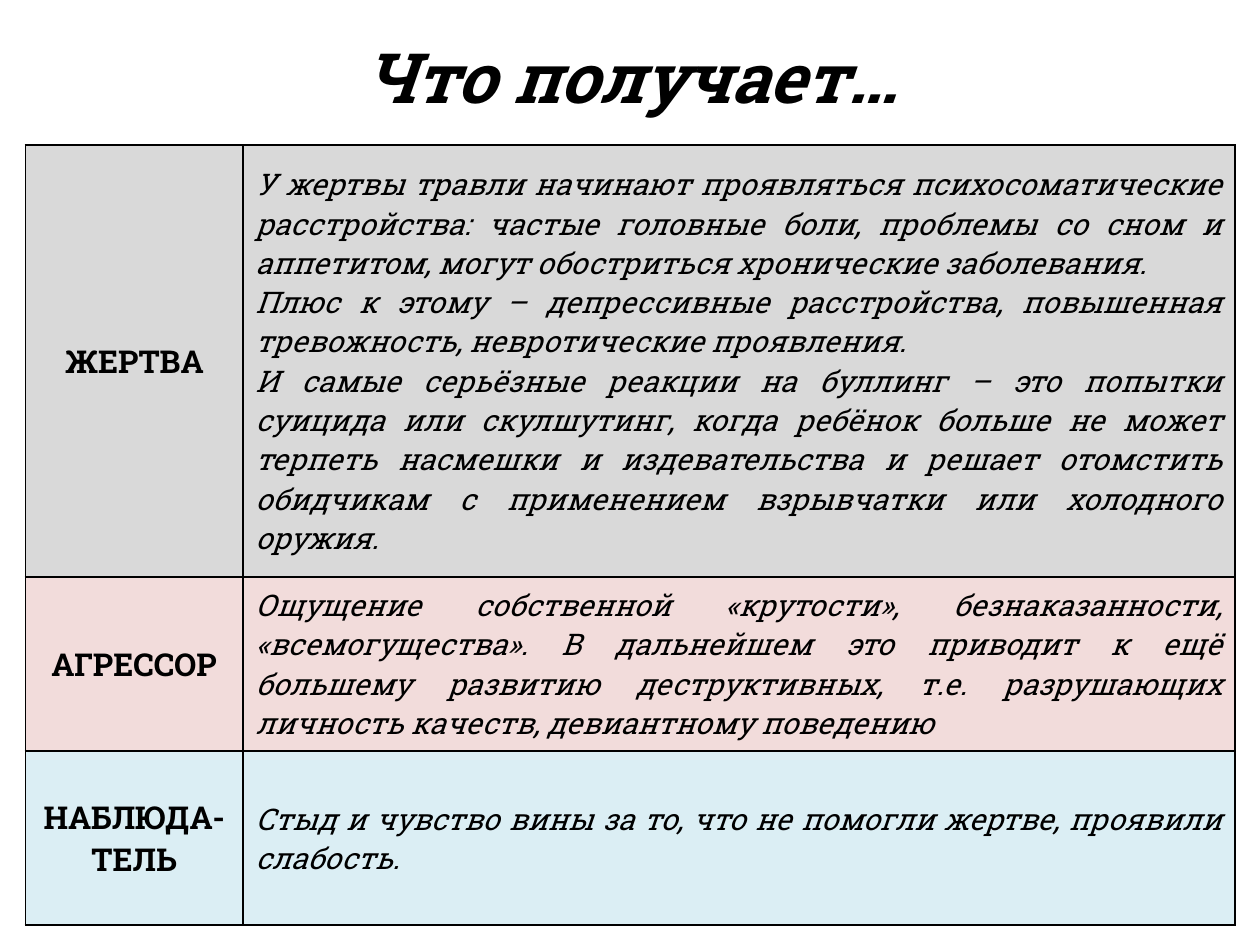
from dataclasses import dataclass

import pptx
import pptx.enum.text
import pptx.oxml
import pptx.oxml.ns
import pptx.util
from pptx.dml.color import RGBColor
from pptx.util import Cm

ALIGN = pptx.enum.text.PP_ALIGN
ANCHOR = pptx.enum.text.MSO_ANCHOR


@dataclass(frozen=True)
class Theme:
    font: str = "Roboto Slab"
    ink: str = "000000"
    gray: str = "D9D9D9"
    pink: str = "F2DCDB"
    blue: str = "DBEEF4"
    title_size: float = 39.6
    role_size: float = 18
    outcome_size: float = 17
    border: float = 1


@dataclass(frozen=True)
class RoleRow:
    role: str
    outcome: str
    fill: str
    height: float


THEME = Theme()
COLUMN_WIDTHS = (4.39, 20)
ROWS = (
    RoleRow(
        "ЖЕРТВА",
        "У жертвы травли начинают проявляться психосоматические расстройства: "
        "частые головные боли, проблемы со сном и аппетитом, могут обостриться "
        "хронические заболевания.\n"
        "Плюс к этому – депрессивные расстройства, повышенная тревожность, "
        "невротические проявления.\n"
        "И самые серьёзные реакции на буллинг – это попытки суицида или "
        "скулшутинг, когда ребёнок больше не может терпеть насмешки и "
        "издевательства и решает отомстить обидчикам с применением взрывчатки "
        "или холодного оружия.",
        THEME.gray,
        8.71,
    ),
    RoleRow(
        "АГРЕССОР",
        "Ощущение собственной «крутости», безнаказанности, «всемогущества». "
        "В дальнейшем это приводит к ещё большему развитию деструктивных, "
        "т.е. разрушающих личность качеств, девиантному поведению",
        THEME.pink,
        3.51,
    ),
    RoleRow(
        "НАБЛЮДА-ТЕЛЬ",
        "Стыд и чувство вины за то, что не помогли жертве, проявили слабость.",
        THEME.blue,
        3.51,
    ),
)


def format_text(tf, size: float, align, bold: bool, italic: bool) -> None:
    for p in tf.paragraphs:
        p.alignment = align
        for r in p.runs:
            r.font.name = THEME.font
            r.font.size = pptx.util.Pt(size)
            r.font.bold = bold
            r.font.italic = italic
            r.font.color.rgb = RGBColor.from_string(THEME.ink)


def add_borders(cell) -> None:
    tc_pr = cell._tc.get_or_add_tcPr()
    width = pptx.util.Pt(THEME.border)
    for i, side in enumerate(("lnL", "lnR", "lnT", "lnB")):
        tc_pr.insert(i, pptx.oxml.parse_xml(
            f'<a:{side} {pptx.oxml.ns.nsdecls("a")} w="{width}"><a:solidFill>'
            f'<a:srgbClr val="{THEME.ink}"/></a:solidFill></a:{side}>'
        ))


def fill_cell(cell, text: str, fill: str, size: float, align, bold: bool) -> None:
    cell.text_frame.text = text
    cell.vertical_anchor = ANCHOR.MIDDLE
    cell.fill.solid()
    cell.fill.fore_color.rgb = RGBColor.from_string(fill)
    format_text(cell.text_frame, size, align, bold, not bold)
    add_borders(cell)


def add_title(s, text: str) -> None:
    sp = s.shapes.title
    sp.left, sp.top, sp.width, sp.height = Cm(1.27), Cm(0.76), Cm(22.86), Cm(1.55)
    tf = sp.text_frame
    tf.text = text
    tf.auto_size = pptx.enum.text.MSO_AUTO_SIZE.NONE
    tf.vertical_anchor = ANCHOR.MIDDLE
    format_text(tf, THEME.title_size, ALIGN.CENTER, True, True)


def add_role_table(s, rows: tuple[RoleRow, ...]) -> None:
    table = s.shapes.add_table(
        len(rows), len(COLUMN_WIDTHS), Cm(0.51), Cm(2.92),
        Cm(sum(COLUMN_WIDTHS)), Cm(sum(row.height for row in rows)),
    ).table
    table.first_row = table.horz_banding = False
    for column, width in zip(table.columns, COLUMN_WIDTHS):
        column.width = Cm(width)
    for i, row in enumerate(rows):
        table.rows[i].height = Cm(row.height)
        fill_cell(table.cell(i, 0), row.role, row.fill,
                  THEME.role_size, ALIGN.CENTER, True)
        fill_cell(table.cell(i, 1), row.outcome, row.fill,
                  THEME.outcome_size, ALIGN.JUSTIFY, False)


def main() -> None:
    prs = pptx.Presentation()
    prs.slide_width, prs.slide_height = Cm(25.4), Cm(19.05)
    s = prs.slides.add_slide(prs.slide_layouts[5])
    add_title(s, "Что получает…")
    add_role_table(s, ROWS)
    prs.save("out.pptx")


if __name__ == "__main__":
    main()
